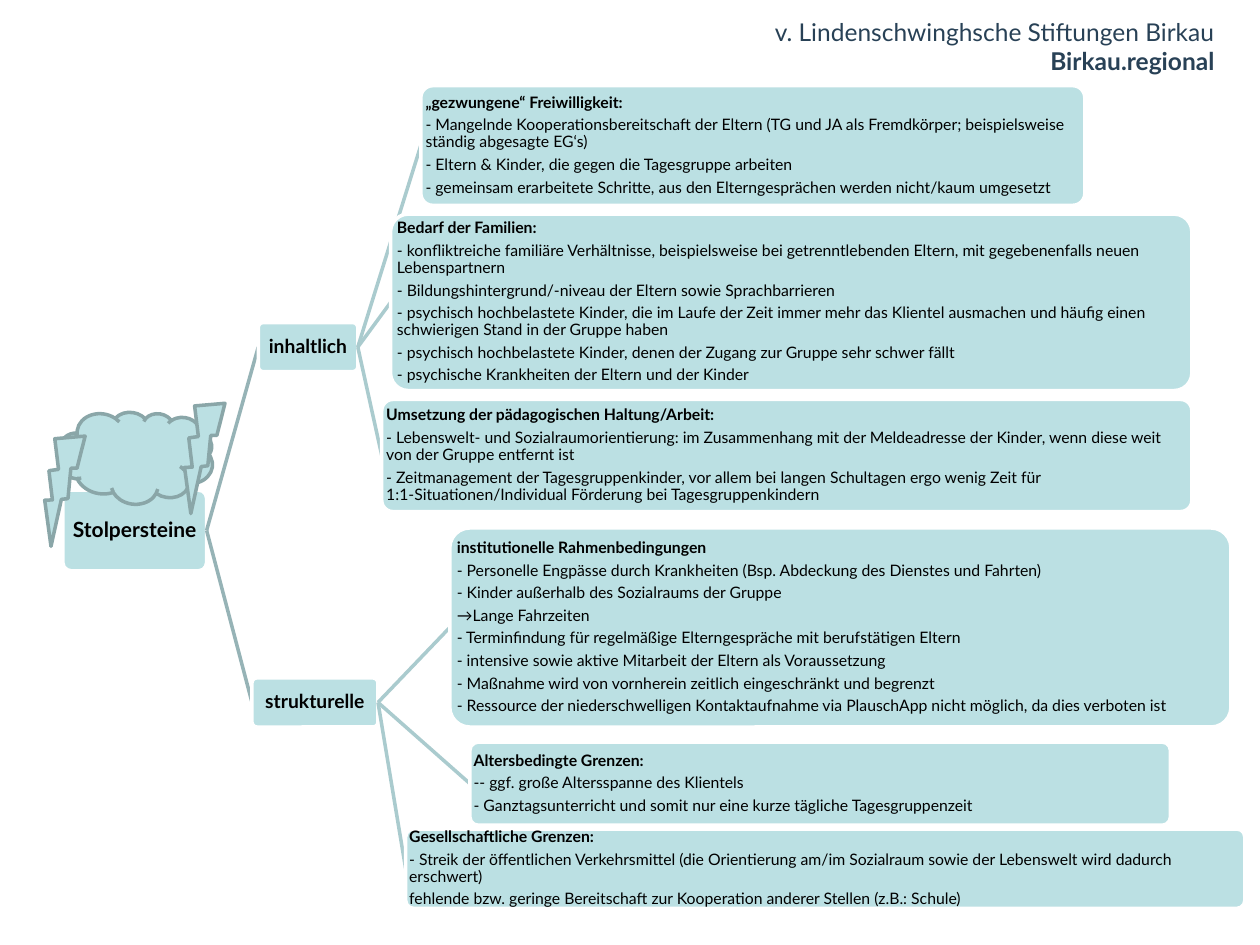
from dataclasses import dataclass

from pptx import Presentation
from pptx import util as u
from pptx.dml.color import RGBColor
from pptx.enum import shapes, text
from pptx.oxml.ns import qn

KIND = shapes.MSO_SHAPE
ALIGN = text.PP_ALIGN
LEFT_SITE, RIGHT_SITE = 1, 3


@dataclass(frozen=True)
class Theme:
    font: str = "Lato"
    fill: str = "BBE0E3"
    edge: str = "FFFFFF"
    ink: str = "000000"
    title: str = "284156"
    storm: str = "8AA6A8"
    links: tuple[str, ...] = ("96B3B6", "AACBCE")
    sizes: tuple[int, ...] = (12, 11, 9)
    title_size: int = 14
    line: int = 2


@dataclass(frozen=True)
class Box:
    x: float
    y: float
    w: float
    h: float


@dataclass(frozen=True)
class Node:
    head: str
    box: Box
    points: tuple[str, ...] = ()
    kids: tuple["Node", ...] = ()


@dataclass(frozen=True)
class Symbol:
    kind: shapes.MSO_SHAPE
    box: Box
    turn: float


THEME = Theme()

TITLE = ("v. Lindenschwinghsche Stiftungen Birkau", "Birkau.regional")

CONTENT = Node("inhaltlich", Box(2.05, 2.56, 0.79, 0.39), kids=(
    Node("„gezwungene“ Freiwilligkeit:", Box(3.34, 0.68, 5.27, 0.95), (
        "- Mangelnde Kooperationsbereitschaft der Eltern (TG und JA als Fremdkörper; "
        "beispielsweise ständig abgesagte EG‘s)",
        "- Eltern & Kinder, die gegen die Tagesgruppe arbeiten",
        "- gemeinsam erarbeitete Schritte, aus den Elterngesprächen werden "
        "nicht/kaum umgesetzt")),
    Node("Bedarf der Familien:", Box(3.1, 1.7, 6.36, 1.4), (
        "- konfliktreiche familiäre Verhältnisse, beispielsweise bei getrenntlebenden "
        "Eltern, mit gegebenenfalls neuen Lebenspartnern",
        "- Bildungshintergrund/-niveau der Eltern sowie Sprachbarrieren",
        "- psychisch hochbelastete Kinder, die im Laufe der Zeit immer mehr das Klientel "
        "ausmachen und häufig einen schwierigen Stand in der Gruppe haben",
        "- psychisch hochbelastete Kinder, denen der Zugang zur Gruppe sehr schwer fällt",
        "- psychische Krankheiten der Eltern und der Kinder")),
    Node("Umsetzung der pädagogischen Haltung/Arbeit:", Box(3.03, 3.17, 6.43, 0.89), (
        "- Lebenswelt- und Sozialraumorientierung: im Zusammenhang mit der Meldeadresse "
        "der Kinder, wenn diese weit von der Gruppe entfernt ist",
        "- Zeitmanagement der Tagesgruppenkinder, vor allem bei langen Schultagen ergo "
        "wenig Zeit für 1:1-Situationen/Individual Förderung bei Tagesgruppenkindern")),
))

FRAME = Node("strukturelle", Box(2, 5.38, 1, 0.39), kids=(
    Node("institutionelle Rahmenbedingungen", Box(3.57, 4.19, 6.2, 1.58), (
        "- Personelle Engpässe durch Krankheiten (Bsp. Abdeckung des Dienstes und Fahrten)",
        "- Kinder außerhalb des Sozialraums der Gruppe",
        "→Lange Fahrzeiten",
        "- Terminfindung für regelmäßige Elterngespräche mit berufstätigen Eltern",
        "- intensive sowie aktive Mitarbeit der Eltern als Voraussetzung",
        "- Maßnahme wird von vornherein zeitlich eingeschränkt und begrenzt",
        "- Ressource der niederschwelligen Kontaktaufnahme via PlauschApp nicht möglich, "
        "da dies verboten ist")),
    Node("Altersbedingte Grenzen:", Box(3.73, 5.89, 5.56, 0.66), (
        "-- ggf. große Altersspanne des Klientels",
        "- Ganztagsunterricht und somit nur eine kurze tägliche Tagesgruppenzeit")),
    Node("Gesellschaftliche Grenzen:", Box(3.22, 6.58, 6.66, 0.63), (
        "- Streik der öffentlichen Verkehrsmittel (die Orientierung am/im Sozialraum "
        "sowie der Lebenswelt wird dadurch erschwert)",
        "fehlende bzw. geringe Bereitschaft zur Kooperation anderer Stellen "
        "(z.B.: Schule)")),
))

ROOT = Node("Stolpersteine", Box(0.5, 3.89, 1.14, 0.64), kids=(CONTENT, FRAME))

STORM = (
    Symbol(KIND.CLOUD, Box(0.48, 3.26, 1.21, 0.74), 8.3),
    Symbol(KIND.LIGHTNING_BOLT, Box(1.34, 3.15, 0.47, 0.87), 35.4),
    Symbol(KIND.LIGHTNING_BOLT, Box(0.23, 3.41, 0.47, 0.87), 35.4),
)


def assign(item, **values) -> None:
    for name, value in values.items():
        setattr(item, name, value)


def place(box: Box) -> list[u.Length]:
    return [u.Inches(n) for n in (box.x, box.y, box.w, box.h)]


def stroke(item, color: str) -> None:
    item.line.color.rgb = RGBColor.from_string(color)
    item.line.width = u.Pt(THEME.line)


def pad(frame, inset: float, anchor) -> None:
    """Set wrapping, anchor and one inset for all four sides."""
    sides = {f"margin_{side}": u.Inches(inset) for side in ("left", "top", "right", "bottom")}
    assign(frame, word_wrap=True, vertical_anchor=anchor, **sides)


def write(par, words: str, size: int, color: str, bold: bool) -> None:
    run = par.add_run()
    run.text = words
    assign(run.font, name=THEME.font, size=u.Pt(size), bold=bold)
    run.font.color.rgb = RGBColor.from_string(color)


def draw_shape(slide, kind, box: Box, edge: str):
    shape = slide.shapes.add_shape(kind, *place(box))
    shape.shadow.inherit = False
    shape.fill.solid()
    shape.fill.fore_color.rgb = RGBColor.from_string(THEME.fill)
    stroke(shape, edge)
    return shape


def draw_link(slide, start: Box, end: Box, color: str):
    """Join the right middle of one box to the left middle of the next."""
    ends = (start.x + start.w, start.y + start.h / 2, end.x, end.y + end.h / 2)
    link = slide.shapes.add_connector(
        shapes.MSO_CONNECTOR.STRAIGHT, *[u.Inches(n) for n in ends])
    stroke(link, color)
    props = link._element.spPr
    props.append(props.makeelement(qn("a:effectLst"), {}))
    return link


def draw_node(slide, node: Node, level: int = 0):
    """Draw a node, then each child with its link lying behind it."""
    shape = draw_shape(slide, KIND.ROUNDED_RECTANGLE, node.box, THEME.edge)
    shape.adjustments[0] = 0.1
    frame = shape.text_frame
    pad(frame, 0.01, text.MSO_ANCHOR.MIDDLE)
    size = THEME.sizes[level]
    align = ALIGN.LEFT if node.points else ALIGN.CENTER
    for i, words in enumerate((node.head, *node.points)):
        par = frame.add_paragraph() if i else frame.paragraphs[0]
        assign(par, alignment=align, line_spacing=0.9, space_after=u.Pt(0.35 * size))
        write(par, words, size, THEME.ink, bold=i == 0)
    for kid in node.kids:
        link = draw_link(slide, node.box, kid.box, THEME.links[level])
        link.begin_connect(shape, RIGHT_SITE)
        link.end_connect(draw_node(slide, kid, level + 1), LEFT_SITE)
    return shape


def draw_title(slide) -> None:
    frame = slide.shapes.add_textbox(*place(Box(4.13, 0.1, 5.51, 0.5))).text_frame
    pad(frame, 0, text.MSO_ANCHOR.BOTTOM)
    par = frame.paragraphs[0]
    par.alignment = ALIGN.RIGHT
    group, unit = TITLE
    write(par, group, THEME.title_size, THEME.title, bold=False)
    par.add_line_break()
    write(par, unit, THEME.title_size, THEME.title, bold=True)


def main() -> None:
    deck = Presentation()
    assign(deck, slide_width=u.Inches(10), slide_height=u.Inches(7.5))
    slide = deck.slides.add_slide(deck.slide_layouts[6])
    draw_title(slide)
    draw_node(slide, ROOT)
    for sign in STORM:
        draw_shape(slide, sign.kind, sign.box, THEME.storm).rotation = sign.turn
    deck.save("out.pptx")


if __name__ == "__main__":
    main()
